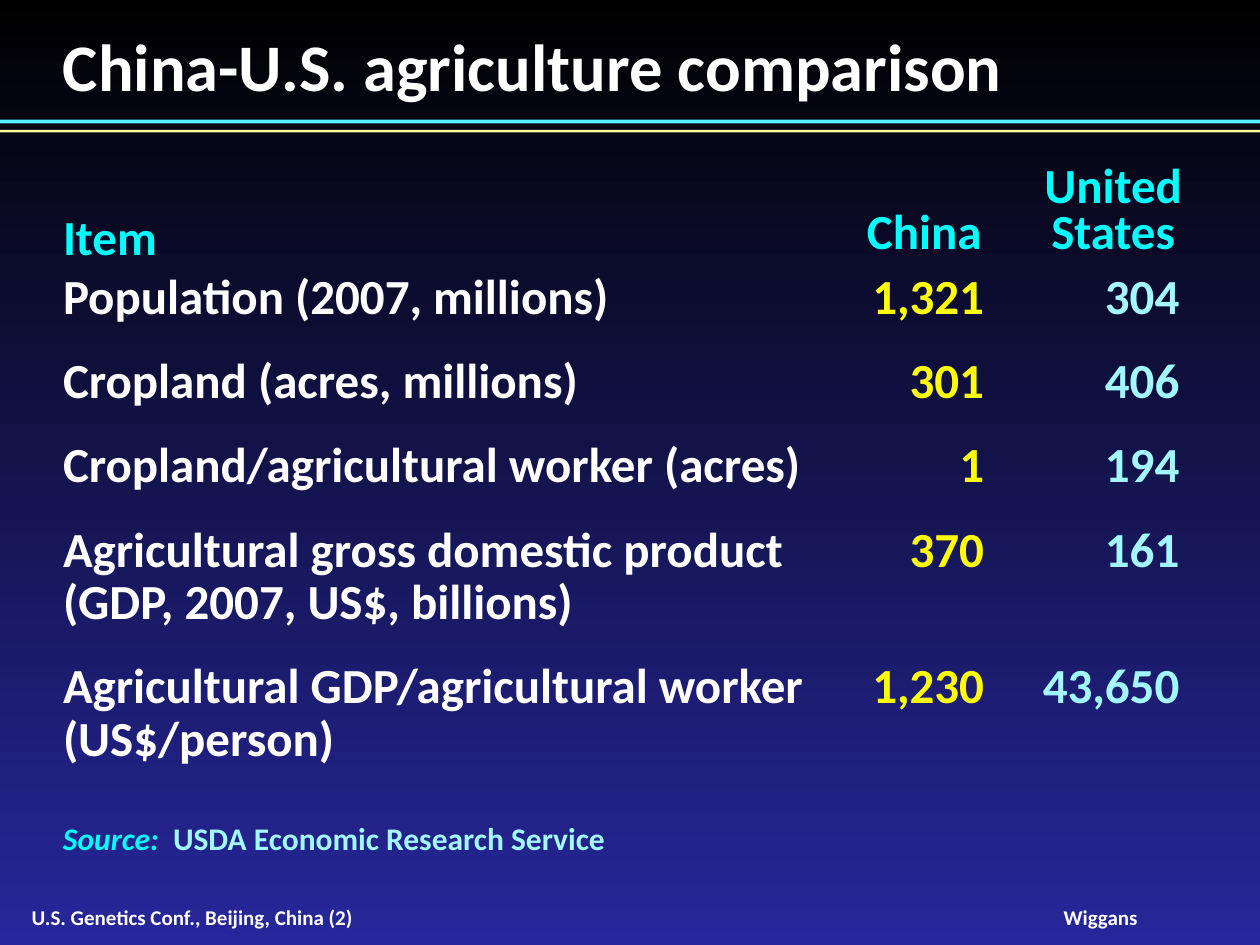
import pptx
import pptx.util
import pptx.dml.color
import pptx.enum.shapes
import pptx.enum.text

Inches, Pt = pptx.util.Inches, pptx.util.Pt
ALIGN = pptx.enum.text.PP_ALIGN
ANCHOR = pptx.enum.text.MSO_ANCHOR

WHITE, CYAN, YELLOW, PALE = "FFFFFF", "00FFFF", "FFFF00", "A3F8FF"
FONT = "Calibri"
NO_GRID = "{2D5ABB26-0587-4C30-8999-92F81FD0307C}"

TITLE = "China-U.S. agriculture comparison"
HEADER = [
    ("Item", ALIGN.LEFT, 30, 0.05),
    ("China", ALIGN.CENTER, 30, 0.1),
    ("United States", ALIGN.CENTER, 26, 0.1),
]
ROWS = [
    ("Population (2007, millions)", "1,321", "304"),
    ("Cropland (acres, millions)", "301", "406"),
    ("Cropland/agricultural worker (acres)", "1", "194"),
    ("Agricultural gross domestic product\n(GDP, 2007, US$, billions)", "370", "161"),
    ("Agricultural GDP/agricultural worker (US$/person)", "1,230", "43,650"),
]
COLUMNS = [
    (5.96, ALIGN.LEFT, WHITE, 0),
    (1.75, ALIGN.RIGHT, YELLOW, 0.4),
    (1.25, ALIGN.RIGHT, PALE, 0.1),
]
ROW_HEIGHTS = [0.82, 0.67, 0.67, 0.67, 1.08, 1.08]
RULES = [(0.95, 0.03, "5BEFFF"), (1.03, 0.02, "FFFF99")]
SOURCE = [("Source:  ", CYAN, True), ("USDA Economic Research Service", PALE, False)]
FOOTERS = [
    ("U.S. Genetics Conf., Beijing, China (2)", 0.25, 5.22, ALIGN.LEFT),
    ("Wiggans", 8.44, 0.59, ALIGN.CENTER),
]


def rgb(value):
    return pptx.dml.color.RGBColor.from_string(value)


def style(p, size, color=None, align=ALIGN.LEFT):
    p.alignment = align
    p.font.name, p.font.size, p.font.bold = FONT, Pt(size), True
    if color:
        p.font.color.rgb = rgb(color)


def add_text(s, box, runs, size, align=ALIGN.LEFT, anchor=ANCHOR.TOP, wrap=True):
    tf = s.shapes.add_textbox(*map(Inches, box)).text_frame
    tf.margin_left = tf.margin_right = tf.margin_top = tf.margin_bottom = 0
    tf.word_wrap, tf.vertical_anchor = wrap, anchor
    p = tf.paragraphs[0]
    style(p, size, align=align)
    for text, color, italic in runs:
        r = p.add_run()
        r.text = text
        r.font.color.rgb = rgb(color)
        r.font.italic = italic


def fill_cell(cell, text, color, align, spacing, right, bottom, anchor):
    cell.fill.background()
    cell.margin_left = cell.margin_top = 0
    cell.margin_right, cell.margin_bottom = Inches(right), Inches(bottom)
    cell.vertical_anchor = anchor
    cell.text = text
    for p in cell.text_frame.paragraphs:
        style(p, 28, color, align)
        p.line_spacing = Pt(spacing)


def add_comparison(s):
    width = sum(c[0] for c in COLUMNS)
    frame = s.shapes.add_table(
        len(ROW_HEIGHTS), len(COLUMNS), Inches(0.5), Inches(1.36),
        Inches(width), Inches(sum(ROW_HEIGHTS)))
    table = frame.table
    table.first_row = table.horz_banding = False
    table._tbl.tblPr.find(pptx.oxml.ns.qn("a:tableStyleId")).text = NO_GRID
    for row, height in zip(table.rows, ROW_HEIGHTS):
        row.height = Inches(height)
    for j, (col_width, align, color, right) in enumerate(COLUMNS):
        table.columns[j].width = Inches(col_width)
        text, head_align, spacing, bottom = HEADER[j]
        fill_cell(table.cell(0, j), text, CYAN, head_align, spacing, 0, bottom, ANCHOR.BOTTOM)
        for i, row in enumerate(ROWS, 1):
            fill_cell(table.cell(i, j), row[j], color, align, 30, right, 0.25, ANCHOR.TOP)


def main():
    prs = pptx.Presentation()
    prs.slide_width, prs.slide_height = Inches(10), Inches(7.5)
    s = prs.slides.add_slide(prs.slide_layouts[6])

    fill = s.background.fill
    fill.gradient()
    fill.gradient_angle = 270
    for stop, color in zip(fill.gradient_stops, ("000000", "27279B")):
        stop.color.rgb = rgb(color)

    for text, left, width, align in FOOTERS:
        add_text(s, (left, 7.18, width, 0.2), [(text, WHITE, False)], 12,
                 align, ANCHOR.MIDDLE, align == ALIGN.LEFT)
    for top, height, color in RULES:
        sp = s.shapes.add_shape(pptx.enum.shapes.MSO_SHAPE.RECTANGLE,
                                0, Inches(top), Inches(10), Inches(height))
        sp.shadow.inherit = False
        sp.fill.solid()
        sp.fill.fore_color.rgb = rgb(color)
        sp.line.fill.background()

    add_text(s, (0.5, 0.2, 9, 0.64), [(TITLE, WHITE, False)], 38)
    add_comparison(s)
    add_text(s, (0.5, 6.5, 7.17, 0.3), SOURCE, 18)
    prs.save("out.pptx")


if __name__ == "__main__":
    main()
